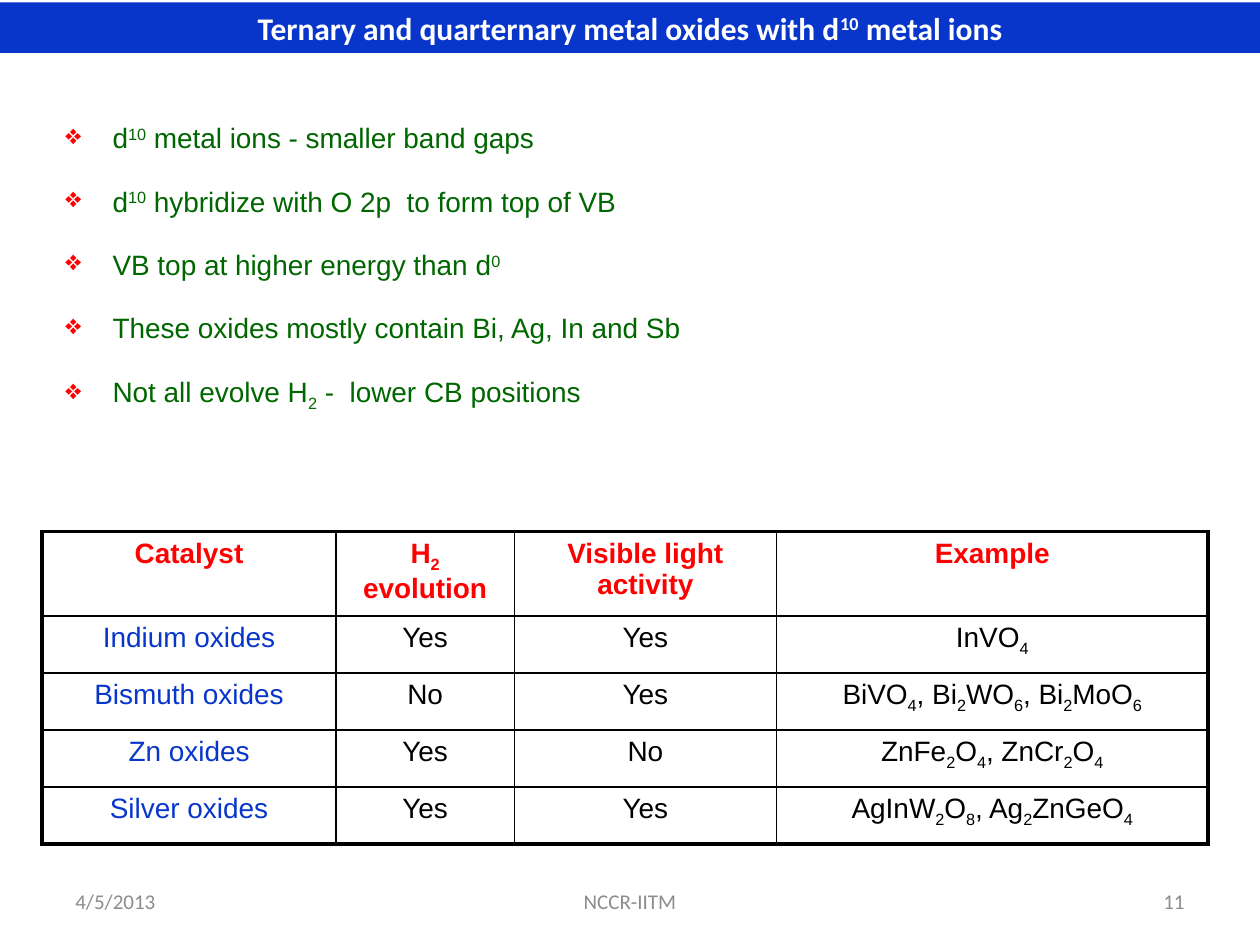
from lxml import etree
from pptx import Presentation
from pptx.dml.color import RGBColor
from pptx.enum.shapes import MSO_SHAPE as SHAPE
from pptx.enum.text import MSO_ANCHOR as ANCHOR, PP_ALIGN as ALIGN
from pptx.oxml.ns import qn
from pptx.util import Cm, Pt

BLUE = RGBColor(0x08, 0x36, 0xCA)
GREEN = RGBColor(0x00, 0x66, 0x00)
RED = RGBColor(0xFF, 0x00, 0x00)
GREY = RGBColor(0x8C, 0x8C, 0x8C)
BLACK = RGBColor(0x00, 0x00, 0x00)
WHITE = RGBColor(0xFF, 0xFF, 0xFF)

BASELINES = {"^": "30000", "_": "-25000"}
THIN, THICK = Pt(1), Pt(2.25)

TITLE = "Ternary and quarternary metal oxides with d|^10| metal ions"
POINTS = [
    "d|^10| metal ions - smaller band gaps",
    "d|^10| hybridize with O 2p  to form top of VB",
    "VB top at higher energy than d|^0",
    "These oxides mostly contain Bi, Ag, In and Sb",
    "Not all evolve H|_2| -  lower CB positions",
]
CATALYSTS = [
    ["Catalyst", "H|_2| evolution", "Visible light activity", "Example"],
    ["Indium oxides", "Yes", "Yes", "InVO|_4"],
    ["Bismuth oxides", "No", "Yes", "BiVO|_4|, Bi|_2|WO|_6|, Bi|_2|MoO|_6"],
    ["Zn oxides", "Yes", "No", "ZnFe|_2|O|_4|, ZnCr|_2|O|_4"],
    ["Silver oxides", "Yes", "Yes", "AgInW|_2|O|_8|, Ag|_2|ZnGeO|_4"],
]
COLUMN_SHARES = [0.252, 0.153, 0.225, 0.37]
HEADER_SHARE = 0.27


def add_runs(p, text, size, color, font="Arial", bold=False):
    """Add the parts between bars as runs; ^ raises a part and _ lowers it."""
    for part in text.split("|"):
        r = p.add_run()
        r.text = part.lstrip("^_")
        r.font.name, r.font.size, r.font.bold = font, Pt(size), bold
        r.font.color.rgb = color
        if part[0] in BASELINES:
            r.font._element.set("baseline", BASELINES[part[0]])


def add_title_bar(slide, x, y, w, h):
    sp = slide.shapes.add_shape(SHAPE.RECTANGLE, x, y, w, h)
    sp.shadow.inherit = False
    sp.fill.solid()
    sp.fill.fore_color.rgb = BLUE
    sp.line.fill.background()
    tf = sp.text_frame
    tf.word_wrap = True
    tf.vertical_anchor = ANCHOR.TOP
    p = tf.paragraphs[0]
    p.alignment = ALIGN.CENTER
    add_runs(p, TITLE, 18, WHITE, "Calibri", True)


def add_diamond_bullet(p):
    pPr = p._p.get_or_add_pPr()
    pPr.set("marL", str(Cm(0.95)))
    pPr.set("indent", str(-Cm(0.95)))
    color = etree.SubElement(pPr, qn("a:buClr"))
    etree.SubElement(color, qn("a:srgbClr"), val=str(RED))
    etree.SubElement(pPr, qn("a:buChar"), char="❖")


def add_points(slide, x, y, w, h):
    tf = slide.shapes.add_textbox(x, y, w, h).text_frame
    tf.word_wrap = True
    for i, point in enumerate(POINTS):
        p = tf.add_paragraph() if i else tf.paragraphs[0]
        add_diamond_bullet(p)
        if i:
            p.space_before = Pt(17)
        add_runs(p, point, 16, GREEN)


def set_borders(cell, widths):
    """Draw the left, right, top and bottom borders in the given widths."""
    tcPr = cell._tc.get_or_add_tcPr()
    for side, width in zip("LRTB", widths):
        ln = etree.SubElement(tcPr, qn("a:ln" + side), w=str(width))
        fill = etree.SubElement(ln, qn("a:solidFill"))
        etree.SubElement(fill, qn("a:srgbClr"), val=str(BLACK))


def add_catalyst_table(slide, x, y, w, h):
    n_rows, n_cols = len(CATALYSTS), len(COLUMN_SHARES)
    table = slide.shapes.add_table(n_rows, n_cols, x, y, w, h).table
    table.first_row = table.horz_banding = False
    for column, share in zip(table.columns, COLUMN_SHARES):
        column.width = int(w * share)
    for i, row in enumerate(table.rows):
        share = (1 - HEADER_SHARE) / (n_rows - 1) if i else HEADER_SHARE
        row.height = int(h * share)
        for j, cell in enumerate(row.cells):
            at_edge = (j == 0, j == n_cols - 1, i == 0, i == n_rows - 1)
            set_borders(cell, [THICK if edge else THIN for edge in at_edge])
            cell.fill.background()
            color = RED if i == 0 else BLUE if j == 0 else BLACK
            p = cell.text_frame.paragraphs[0]
            p.alignment = ALIGN.CENTER
            add_runs(p, CATALYSTS[i][j], 16, color, bold=i == 0)


def add_footer(slide, x, y, w, h):
    side, middle = Cm(5.92), Cm(8.05)
    parts = [
        ("4/5/2013", x, side, ALIGN.LEFT),
        ("NCCR-IITM", x + (w - middle) // 2, middle, ALIGN.CENTER),
        ("11", x + w - side, side, ALIGN.RIGHT),
    ]
    for text, left, width, align in parts:
        tf = slide.shapes.add_textbox(left, y, width, h).text_frame
        tf.word_wrap = True
        tf.vertical_anchor = ANCHOR.MIDDLE
        p = tf.paragraphs[0]
        p.alignment = align
        add_runs(p, text, 12, GREY, "Calibri")


def main():
    prs = Presentation()
    prs.slide_width, prs.slide_height = Cm(25.4), Cm(19.05)
    s = prs.slides.add_slide(prs.slide_layouts[6])
    add_footer(s, Cm(1.27), Cm(17.65), Cm(22.86), Cm(1.02))
    add_title_bar(s, Cm(0), Cm(0.05), Cm(25.4), Cm(1.02))
    add_points(s, Cm(1.07), Cm(2.31), Cm(21.59), Cm(6.38))
    add_catalyst_table(s, Cm(0.85), Cm(10.72), Cm(23.5), Cm(6.3))
    prs.save("out.pptx")


if __name__ == "__main__":
    main()
